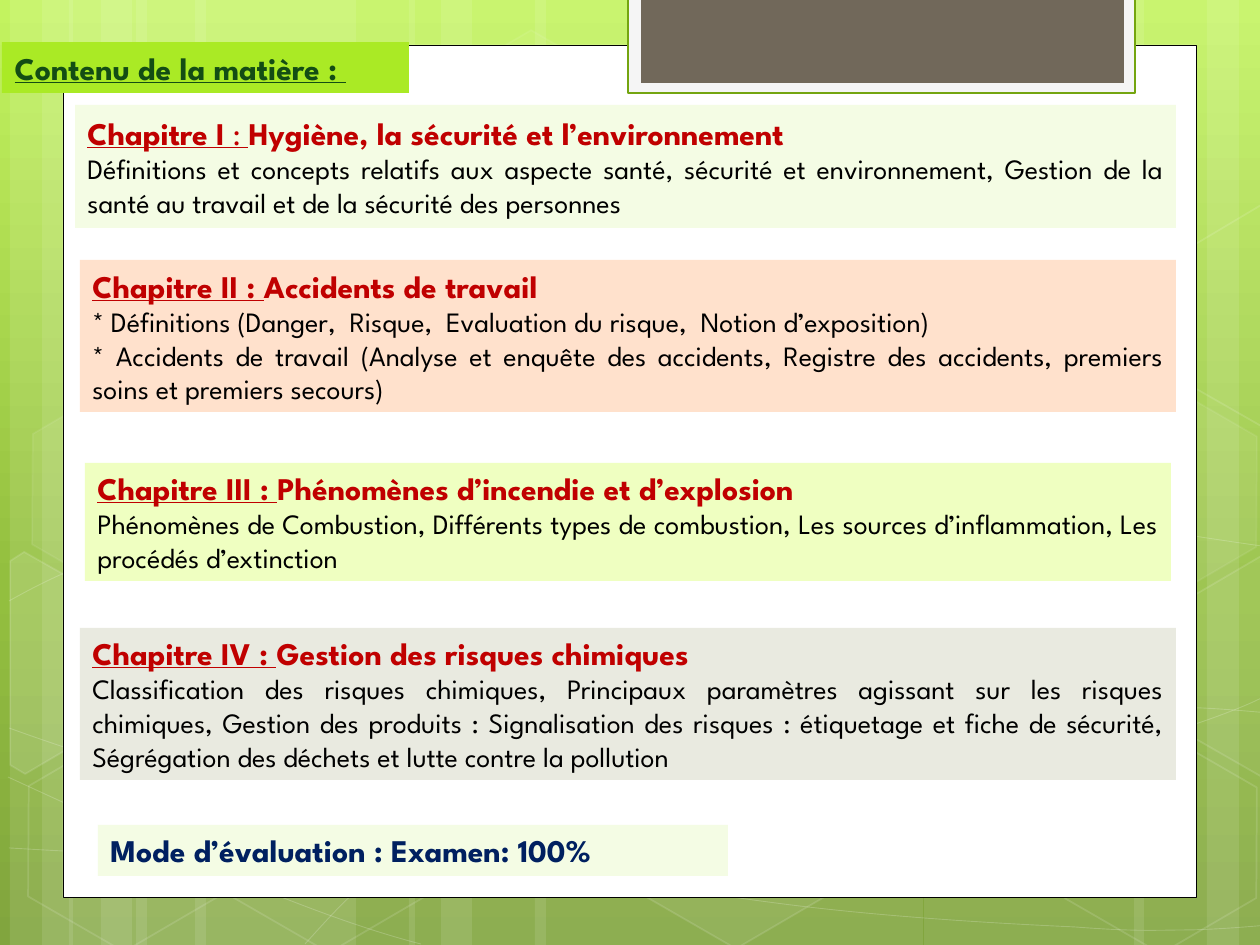
import copy
import math

import pptx
import pptx.dml.color
import pptx.enum.shapes
import pptx.enum.text
import pptx.oxml
import pptx.oxml.ns
import pptx.util
from pptx.dml.color import RGBColor

EMU_PER_PX = 914400 / 126
SLIDE_WIDTH, SLIDE_HEIGHT = 1260, 945
FONT_NAME = "League Spartan"
TILT = 30

WHITE = RGBColor(0xFF, 0xFF, 0xFF)
BLACK = RGBColor(0x00, 0x00, 0x00)
RED = RGBColor(0xC0, 0x00, 0x00)
NAVY = RGBColor(0x00, 0x20, 0x60)
DARK_GREEN = RGBColor(0x13, 0x4D, 0x14)
LIME = RGBColor(0xAA, 0xEA, 0x25)
FRAME_GREEN = RGBColor(0x74, 0xA5, 0x10)
FRAME_GREY = RGBColor(0xF5, 0xF5, 0xF5)
TAUPE = RGBColor(0x71, 0x68, 0x5A)
PALE_GREEN = RGBColor(0xF4, 0xFC, 0xE4)
PEACH = RGBColor(0xFF, 0xE1, 0xCC)
PALE_LIME = RGBColor(0xEF, 0xFF, 0xC1)
PALE_GREY = RGBColor(0xE9, 0xEA, 0xE0)
BACKGROUND_STOPS = [
    (0, RGBColor(0xC3, 0xF3, 0x5F)),
    (0.62, RGBColor(0x93, 0xBF, 0x3F)),
    (1, RGBColor(0x81, 0xA5, 0x3E)),
]

RECTANGLE = pptx.enum.shapes.MSO_SHAPE.RECTANGLE
HEXAGON = pptx.enum.shapes.MSO_SHAPE.HEXAGON
TOP = pptx.enum.text.MSO_ANCHOR.TOP
MIDDLE = pptx.enum.text.MSO_ANCHOR.MIDDLE
JUSTIFY = pptx.enum.text.PP_ALIGN.JUSTIFY
LEFT = pptx.enum.text.PP_ALIGN.LEFT
FIT_SHAPE = pptx.enum.text.MSO_AUTO_SIZE.SHAPE_TO_FIT_TEXT
FIXED_SIZE = pptx.enum.text.MSO_AUTO_SIZE.NONE

# left, width
BARS = [(136, 220), (10, 63), (42, 105), (195, 220), (69, 63), (101, 105),
        (924, 220), (1207, 63), (1134, 105), (535, 388), (409, 63), (441, 105)]

# Start point, then two control points and an end point for each Bézier segment
CURVES = [
    [(9, 848), (77, 852), (145, 856), (239, 854), (334, 853), (451, 851), (577, 838),
     (703, 825), (882, 801), (998, 777), (1113, 753), (1231, 716), (1269, 694)],
    [(9, 601), (45, 581), (82, 562), (152, 543), (224, 524), (326, 499), (437, 488),
     (549, 478), (685, 478), (824, 488), (963, 498), (1193, 537), (1269, 547)],
    [(8, 777), (160, 847), (311, 916), (421, 944)],
    [(9, 728), (48, 742), (88, 756), (161, 776), (234, 795), (344, 827), (450, 848),
     (554, 869), (687, 892), (791, 905), (896, 918), (1008, 924), (1075, 927),
     (1140, 932), (1158, 930), (1191, 930), (1223, 929), (1246, 927), (1269, 925)],
    [(305, 944), (328, 919), (350, 893), (381, 871), (411, 848), (454, 823), (489, 805),
     (524, 788), (546, 780), (592, 767), (638, 755), (722, 737), (766, 728),
     (811, 719), (818, 719), (857, 717), (896, 713), (958, 709), (1000, 708),
     (1045, 707), (1116, 708), (1116, 708), (1144, 708), (1173, 708), (1201, 708),
     (1223, 709), (1245, 711), (1268, 713)],
]

# left, top, fill opacity, line opacity (percent)
HEXAGONS = [(421, 45, 4, 8), (626, 742, 6, 12), (14, 745, None, 12), (18, 393, 7, 8),
            (219, 746, None, 12), (949, 571, 10, 12), (1051, 747, None, 12),
            (1051, 396, 7, 8)]

# centre of rotation, outline as it lies on the slide, fill opacity
CUT_HEXAGONS = [
    ((45, 674),
     [(10, 561), (24, 552), (121, 607), (120, 718), (25, 774), (10, 765)], 10),
    ((1241, 655),
     [(1167, 611), (1261, 556), (1271, 562), (1271, 772), (1263, 777), (1167, 722)], 4),
    ((1241, 304),
     [(1167, 261), (1261, 205), (1272, 212), (1271, 422), (1263, 427), (1167, 372)], None),
]

# box, fill, anchor, heading runs (text, bold, underline), body paragraphs
CHAPTERS = [
    ((75, 105, 1101, 123), PALE_GREEN, MIDDLE,
     [("Chapitre I", True, True), (" : ", False, True),
      ("Hygiène, la sécurité et l’environnement", True, False)],
     ["Définitions et concepts relatifs aux aspecte santé, sécurité et environnement, "
      "Gestion de la santé au travail et de la sécurité des personnes"]),
    ((80, 260, 1096, 152), PEACH, MIDDLE,
     [("Chapitre II : ", True, True), ("Accidents de travail", True, False)],
     ["* Définitions (Danger,  Risque,  Evaluation du risque,  Notion d’exposition)",
      "* Accidents de travail (Analyse et enquête des accidents, Registre des accidents, "
      "premiers soins et premiers secours)"]),
    ((85, 463, 1086, 118), PALE_LIME, TOP,
     [("Chapitre III : ", True, True), ("Phénomènes d’incendie et d’explosion", True, False)],
     ["Phénomènes de Combustion, Différents types de combustion, "
      "Les sources d’inflammation, Les procédés d’extinction"]),
    ((80, 628, 1096, 152), PALE_GREY, TOP,
     [("Chapitre IV : ", True, True), ("Gestion des risques chimiques", True, False)],
     ["Classification des risques chimiques, Principaux paramètres agissant sur les risques "
      "chimiques, Gestion des produits : Signalisation des risques : étiquetage et fiche de "
      "sécurité, Ségrégation des déchets et lutte contre la pollution"]),
]


def px(value):
    return pptx.util.Emu(round(value * EMU_PER_PX))


def paint(fill, parent, color, opacity=100):
    """Fill with a colour, or leave empty when opacity is None."""
    if opacity is None:
        fill.background()
        return
    fill.solid()
    fill.fore_color.rgb = color
    if opacity < 100:
        color_element = parent.find(
            pptx.oxml.ns.qn("a:solidFill") + "/" + pptx.oxml.ns.qn("a:srgbClr"))
        color_element.append(pptx.oxml.parse_xml(
            f'<a:alpha {pptx.oxml.ns.nsdecls("a")} val="{opacity * 1000}"/>'))


def style(shape, fill_opacity, line_opacity, line_width, fill=WHITE, line=WHITE):
    shape.shadow.inherit = False
    properties = shape.element.spPr
    paint(shape.fill, properties, fill, fill_opacity)
    shape.line.fill.background()
    if line_opacity is not None:
        shape.line.width = pptx.util.Pt(line_width)
        paint(shape.line.fill, properties.find(pptx.oxml.ns.qn("a:ln")), line, line_opacity)


def add_preset(slide, preset, box, *styling, **colors):
    shape = slide.shapes.add_shape(preset, *map(px, box))
    style(shape, *styling, **colors)
    return shape


def add_outline(slide, points, close, *styling):
    points = [(px(x), px(y)) for x, y in points]
    builder = slide.shapes.build_freeform(*points[0], scale=1.0)
    builder.add_line_segments(points[1:], close=close)
    shape = builder.convert_to_shape()
    style(shape, *styling)
    return shape


def add_curve(slide, points):
    """Draw an open outline and join each three segments into one cubic Bézier."""
    shape = add_outline(slide, points, False, None, 20, 0.5)
    path_element = shape.element.find(".//" + pptx.oxml.ns.qn("a:path"))
    segments = path_element.findall(pptx.oxml.ns.qn("a:lnTo"))
    for start in range(0, len(segments), 3):
        curve = pptx.oxml.parse_xml(f'<a:cubicBezTo {pptx.oxml.ns.nsdecls("a")}/>')
        path_element.append(curve)
        for segment in segments[start:start + 3]:
            curve.append(segment[0])
            path_element.remove(segment)


def turn_back(point, centre):
    """Undo the tilt of a point about a centre."""
    cosine, sine = math.cos(math.radians(TILT)), math.sin(math.radians(TILT))
    x, y = point[0] - centre[0], point[1] - centre[1]
    return centre[0] + x * cosine + y * sine, centre[1] - x * sine + y * cosine


def set_background(slide):
    fill = slide.background.fill
    fill.gradient()
    stop_list = slide.element.find(".//" + pptx.oxml.ns.qn("a:gsLst"))
    stop_list.append(copy.deepcopy(stop_list[-1]))
    for stop, (position, color) in zip(fill.gradient_stops, BACKGROUND_STOPS):
        stop.position = position
        stop.color.rgb = color
    fill.gradient_angle = 270


def add_backdrop(slide):
    for left, width in BARS:
        add_preset(slide, RECTANGLE, (left, 0, width, SLIDE_HEIGHT), 10, None, 0)
    for curve in CURVES:
        add_curve(slide, curve)
    for left, top, fill_opacity, line_opacity in HEXAGONS:
        hexagon = add_preset(slide, HEXAGON, (left, top, 220, 192), fill_opacity, line_opacity, 1)
        hexagon.adjustments[0] = 0.285
        hexagon.rotation = TILT
    for centre, outline, fill_opacity in CUT_HEXAGONS:
        upright = [turn_back(point, centre) for point in outline]
        add_outline(slide, upright, True, fill_opacity, 12, 1).rotation = TILT


def add_panel(slide):
    add_preset(slide, RECTANGLE, (63, 45, 1134, 853), 100, 100, 0.5, line=BLACK)
    add_preset(slide, RECTANGLE, (628, -3, 507, 96), 100, 100, 1.25,
               fill=FRAME_GREY, line=FRAME_GREEN)
    add_preset(slide, RECTANGLE, (641, -3, 483, 86), 100, None, 0, fill=TAUPE)


def format_box(shape, box, fill, anchor, auto_size):
    shape.left, shape.top, shape.width, shape.height = map(px, box)
    paint(shape.fill, shape.element.spPr, fill)
    frame = shape.text_frame
    frame.word_wrap = True
    frame.auto_size = auto_size
    frame.vertical_anchor = anchor
    return frame


def format_paragraph(paragraph, size, color, bold=None, alignment=JUSTIFY):
    paragraph.alignment = alignment
    paragraph.font.name = FONT_NAME
    paragraph.font.size = pptx.util.Pt(size)
    paragraph.font.color.rgb = color
    paragraph.font.bold = bold


def add_box(slide, box, fill, anchor):
    return format_box(slide.shapes.add_textbox(*map(px, box)), box, fill, anchor, FIT_SHAPE)


def add_chapter(slide, box, fill, anchor, heading_runs, body):
    frame = add_box(slide, box, fill, anchor)
    heading = frame.paragraphs[0]
    format_paragraph(heading, 18, RED)
    for text, bold, underline in heading_runs:
        run = heading.add_run()
        run.text = text
        run.font.bold = bold
        run.font.underline = underline
    for text in body:
        paragraph = frame.add_paragraph()
        paragraph.text = text
        format_paragraph(paragraph, 16, BLACK, False)


def add_evaluation(slide):
    paragraph = add_box(slide, (98, 825, 630, 51), PALE_GREEN, TOP).paragraphs[0]
    paragraph.text = "Mode d’évaluation : Examen: 100%"
    format_paragraph(paragraph, 18, NAVY, True, LEFT)


def place_title(slide):
    title = slide.shapes.title
    paragraph = format_box(title, (2, 42, 407, 51), LIME, MIDDLE, FIXED_SIZE).paragraphs[0]
    paragraph.text = "Contenu de la matière : "
    format_paragraph(paragraph, 18, DARK_GREEN, True)
    paragraph.font.underline = True
    slide.shapes.element.append(title.element)  # bring to front


def main():
    presentation = pptx.Presentation()
    presentation.slide_width = px(SLIDE_WIDTH)
    presentation.slide_height = px(SLIDE_HEIGHT)
    slide = presentation.slides.add_slide(presentation.slide_layouts[5])
    set_background(slide)
    add_backdrop(slide)
    add_panel(slide)
    for chapter in CHAPTERS:
        add_chapter(slide, *chapter)
    add_evaluation(slide)
    place_title(slide)
    presentation.save("out.pptx")


if __name__ == "__main__":
    main()
